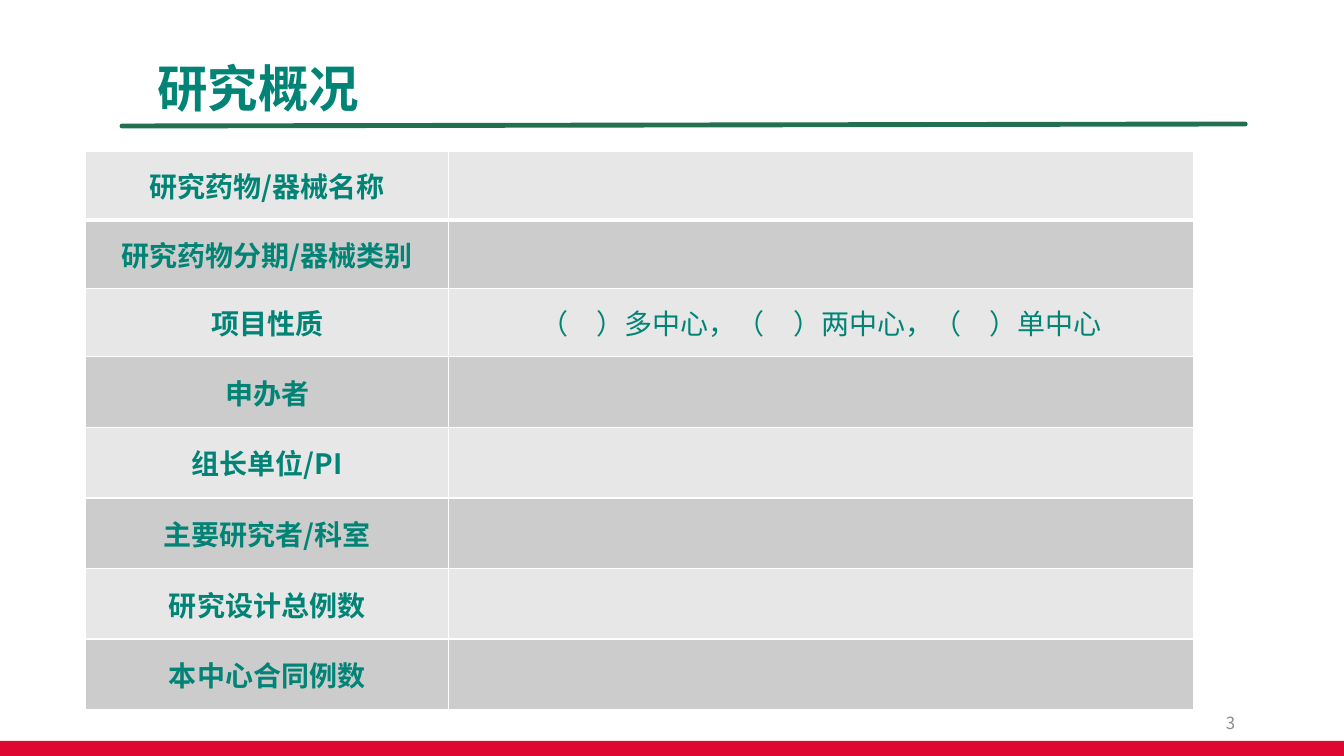
"""Build the study overview slide with its table of project details."""
from lxml import etree
from pptx import Presentation
from pptx import util as u
from pptx.dml.color import RGBColor
from pptx.enum import shapes, text
from pptx.oxml.ns import qn

FONT = "Noto Sans CJK SC"
COLORS = {
    "teal": "018476",
    "rule": "237051",
    "red": "DD0732",
    "gray": "8C8C8C",
    "light": "E7E7E7",
    "dark": "CCCCCC",
    "white": "FFFFFF",
}
ROWS = [
    ("研究药物/器械名称", ""),
    ("研究药物分期/器械类别", ""),
    ("项目性质", "（　）多中心，（　）两中心，（　）单中心"),
    ("申办者", ""),
    ("组长单位/PI", ""),
    ("主要研究者/科室", ""),
    ("研究设计总例数", ""),
    ("本中心合同例数", ""),
]
COLUMN_WIDTHS = [3.6, 7.39]
ROW_HEIGHTS = [0.68] * 3 + [0.7] * 5


def color(name):
    """Return the named colour."""
    return RGBColor.from_string(COLORS[name])


def write(text_frame, content, size, color_name, alignment, bold=False):
    """Fill a text frame with one formatted paragraph."""
    text_frame.text = content
    text_frame.word_wrap = True
    paragraph = text_frame.paragraphs[0]
    paragraph.alignment = alignment
    for run in paragraph.runs:
        run.font.size = u.Pt(size)
        run.font.bold = bold
        run.font.color.rgb = color(color_name)
        run.font.name = FONT
        east_asian = etree.SubElement(run.font._element, qn("a:ea"))
        east_asian.set("typeface", FONT)
    return paragraph


def add_title(slide, content):
    """Place and format the slide title."""
    title = slide.shapes.title
    title.left, title.top = u.Inches(1.46), u.Inches(0.39)
    title.width, title.height = u.Inches(11.17), u.Inches(1.02)
    title.text_frame.vertical_anchor = text.MSO_ANCHOR.MIDDLE
    paragraph = write(title.text_frame, content, 36, "teal", text.PP_ALIGN.LEFT, True)
    paragraph.line_spacing = 0.9


def add_footer_band(slide):
    """Draw the red band along the bottom edge."""
    band = slide.shapes.add_shape(
        shapes.MSO_SHAPE.RECTANGLE,
        u.Inches(0), u.Inches(7.35), u.Inches(13.33), u.Inches(0.15),
    )
    band.shadow.inherit = False
    band.fill.solid()
    band.fill.fore_color.rgb = color("red")
    band.line.fill.background()


def add_title_rule(slide):
    """Draw the green round-ended line under the title."""
    rule = slide.shapes.add_connector(
        shapes.MSO_CONNECTOR.STRAIGHT,
        u.Inches(1.21), u.Inches(1.25), u.Inches(12.35), u.Inches(1.23),
    )
    rule.line.color.rgb = color("rule")
    rule.line.width = u.Pt(3.5)
    rule.line._ln.set("cap", "rnd")
    etree.SubElement(rule._element.spPr, qn("a:effectLst"))


def add_page_number(slide, number):
    """Write the page number at the lower right."""
    box = slide.shapes.add_textbox(
        u.Inches(9.35), u.Inches(6.97), u.Inches(3), u.Inches(0.4)
    )
    box.text_frame.vertical_anchor = text.MSO_ANCHOR.MIDDLE
    write(box.text_frame, number, 12, "gray", text.PP_ALIGN.RIGHT)


def set_borders(cell, widths):
    """Give a cell white borders with a width in points for each side."""
    properties = cell._tc.get_or_add_tcPr()
    for index, (side, width) in enumerate(widths.items()):
        line = etree.Element(qn(f"a:ln{side}"), w=str(u.Pt(width)))
        fill = etree.SubElement(line, qn("a:solidFill"))
        etree.SubElement(fill, qn("a:srgbClr"), val=COLORS["white"])
        properties.insert(index, line)


def add_overview_table(slide):
    """Add the table of study details with alternating row fills."""
    table = slide.shapes.add_table(
        len(ROWS), len(COLUMN_WIDTHS), u.Inches(0.85), u.Inches(1.5),
        u.Inches(sum(COLUMN_WIDTHS)), u.Inches(sum(ROW_HEIGHTS)),
    ).table
    table.first_row = table.horz_banding = False
    for column, width in zip(table.columns, COLUMN_WIDTHS):
        column.width = u.Inches(width)
    for row_index, values in enumerate(ROWS):
        table.rows[row_index].height = u.Inches(ROW_HEIGHTS[row_index])
        widths = {
            "L": 1,
            "R": 1,
            "T": 3 if row_index == 1 else 1,
            "B": 3 if row_index == 0 else 1,
        }
        for column_index, value in enumerate(values):
            cell = table.cell(row_index, column_index)
            cell.fill.solid()
            cell.fill.fore_color.rgb = color("dark" if row_index % 2 else "light")
            cell.vertical_anchor = text.MSO_ANCHOR.MIDDLE
            set_borders(cell, widths)
            if value:
                write(cell.text_frame, value, 20, "teal",
                      text.PP_ALIGN.CENTER, column_index == 0)


def main():
    """Build and save the presentation."""
    presentation = Presentation()
    presentation.slide_width = u.Inches(13.33)
    presentation.slide_height = u.Inches(7.5)
    slide = presentation.slides.add_slide(presentation.slide_layouts[5])
    add_footer_band(slide)
    add_title_rule(slide)
    add_title(slide, "研究概况")
    add_page_number(slide, "3")
    add_overview_table(slide)
    presentation.save("out.pptx")


if __name__ == "__main__":
    main()
